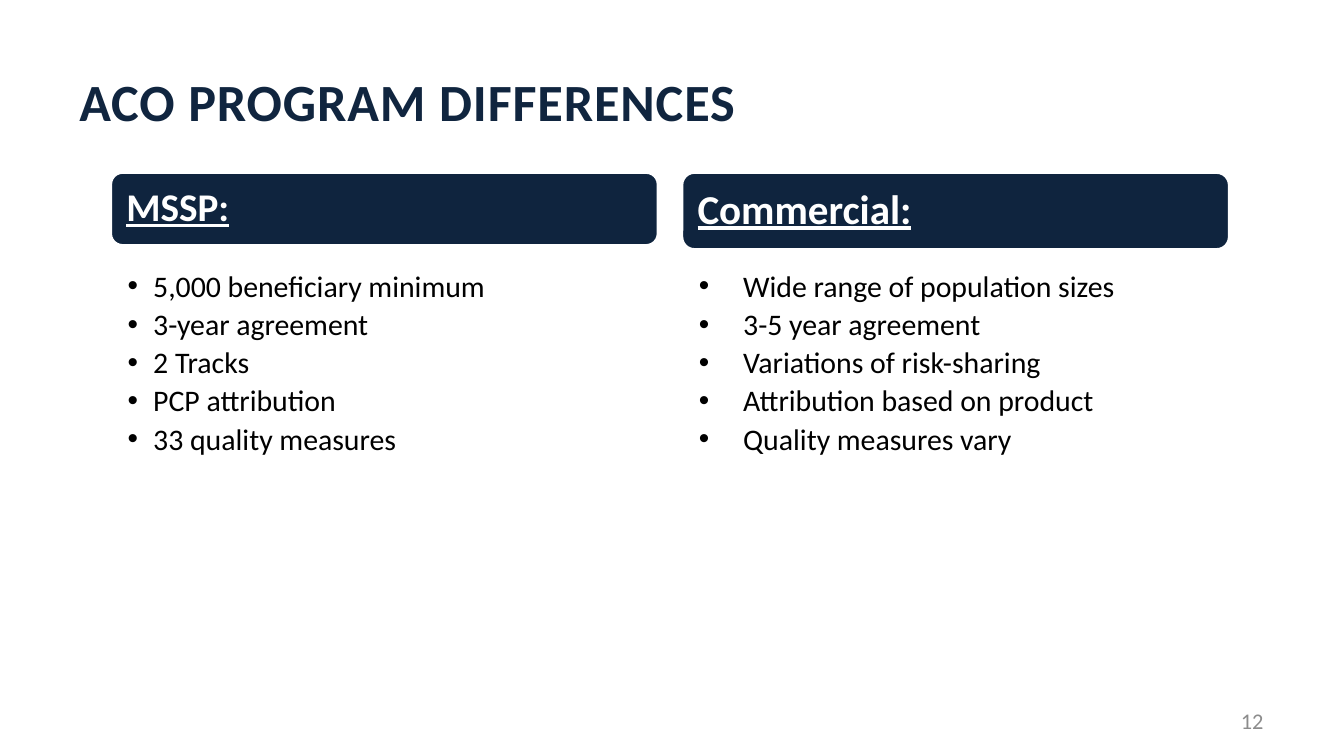
import pptx
import pptx.util
import pptx.dml.color
import pptx.enum.shapes
import pptx.enum.text
import pptx.oxml.ns
from lxml import etree

Inches, Pt = pptx.util.Inches, pptx.util.Pt
PP_ALIGN = pptx.enum.text.PP_ALIGN
ANCHOR = pptx.enum.text.MSO_ANCHOR

# Content
TITLE = "ACO PROGRAM DIFFERENCES"
PAGE = "12"
COLUMNS = [
    {"head": "MSSP:", "size": 21, "head_h": 0.55, "body_h": 3.18, "indent": 0.19,
     "insets": (0.13, 0.03, 0.16, 0.03),
     "items": ["5,000 beneficiary minimum", "3-year agreement", "2 Tracks",
               "PCP attribution", "33 quality measures"]},
    {"head": "Commercial:", "size": 22, "head_h": 0.58, "body_h": 1.79, "indent": 0.33,
     "insets": (0.13, 0.03, 0.12, 0.03),
     "items": ["Wide range of population sizes", "3-5 year agreement",
               "Variations of risk-sharing", "Attribution based on product",
               "Quality measures vary"]},
]

# Layout and colours
LEFT, PITCH, WIDTH = 0.82, 4.25, 4.08
HEAD_TOP, BODY_TOP, HEAD_PAD = 1.28, 1.99, 0.03
NAVY, TITLE_NAVY, WHITE, BLACK, GREY = "0F243E", "10253F", "FFFFFF", "000000", "8C8C8C"


def rgb(value):
    return pptx.dml.color.RGBColor.from_string(value)


def set_frame(tf, anchor, insets=(0.1, 0.05, 0.1, 0.05)):
    tf.word_wrap = True
    tf.auto_size = pptx.enum.text.MSO_AUTO_SIZE.NONE
    tf.vertical_anchor = anchor
    for side, inset in zip(("left", "top", "right", "bottom"), insets):
        setattr(tf, f"margin_{side}", Inches(inset))


def add_text_frame(shapes, box, *frame):
    tf = shapes.add_textbox(*map(Inches, box)).text_frame
    set_frame(tf, *frame)
    return tf


def write(p, text, size, color, align=PP_ALIGN.LEFT, spacing=1.0, after=0, **font):
    layout = {"alignment": align, "line_spacing": spacing,
              "space_before": Pt(0), "space_after": Pt(after)}
    for name, value in layout.items():
        setattr(p, name, value)
    r = p.add_run()
    r.text = text
    for name, value in {"name": "Calibri", "size": Pt(size), **font}.items():
        setattr(r.font, name, value)
    r.font.color.rgb = rgb(color)
    return r


def add_bullet(p, indent):
    pPr = p._p.get_or_add_pPr()
    pPr.set("marL", str(Inches(indent)))
    pPr.set("indent", str(-Inches(indent)))
    for tag, key, value in (("a:buFont", "typeface", "Arial"), ("a:buChar", "char", "•")):
        etree.SubElement(pPr, pptx.oxml.ns.qn(tag)).set(key, value)


# Widescreen slide, 16:9
prs = pptx.Presentation()
prs.slide_width = Inches(10)
prs.slide_height = prs.slide_width * 9 // 16
s = prs.slides.add_slide(prs.slide_layouts[5])

# Title
title = s.shapes.title
title.left, title.top, title.width, title.height = map(Inches, (0.49, 0.53, 9, 0.5))
set_frame(title.text_frame, ANCHOR.BOTTOM)
r = write(title.text_frame.paragraphs[0], TITLE, 28, TITLE_NAVY, spacing=0.8, bold=True)
r.font._element.set("spc", "50")

# Two grouped columns: a header bar above a bulleted list
for i, column in enumerate(COLUMNS):
    shapes = s.shapes.add_group_shape().shapes
    left, head_h = LEFT + i * PITCH, column["head_h"]

    bar = shapes.add_shape(pptx.enum.shapes.MSO_SHAPE.ROUNDED_RECTANGLE,
                           *map(Inches, (left, HEAD_TOP, WIDTH, head_h)))
    bar.shadow.inherit = False
    bar.fill.solid()
    bar.fill.fore_color.rgb = rgb(NAVY)
    bar.line.color.rgb = rgb(WHITE)
    bar.line.width = Pt(2)

    head_box = (left + HEAD_PAD, HEAD_TOP + HEAD_PAD, WIDTH - 2 * HEAD_PAD, head_h - 2 * HEAD_PAD)
    tf = add_text_frame(shapes, head_box, ANCHOR.MIDDLE, (0.09, 0.09, 0.09, 0.09))
    write(tf.paragraphs[0], column["head"], column["size"], WHITE,
          spacing=0.9, bold=True, underline=True)

    tf = add_text_frame(shapes, (left, BODY_TOP, WIDTH, column["body_h"]),
                        ANCHOR.TOP, column["insets"])
    for n, item in enumerate(column["items"]):
        p = tf.add_paragraph() if n else tf.paragraphs[0]
        add_bullet(p, column["indent"])
        write(p, item, 16, BLACK, spacing=0.9, after=3.2)

# Page number
tf = add_text_frame(s.shapes, (7.17, 5.21, 2.33, 0.3), ANCHOR.MIDDLE)
write(tf.paragraphs[0], PAGE, 12, GREY, align=PP_ALIGN.RIGHT)

prs.save("out.pptx")
